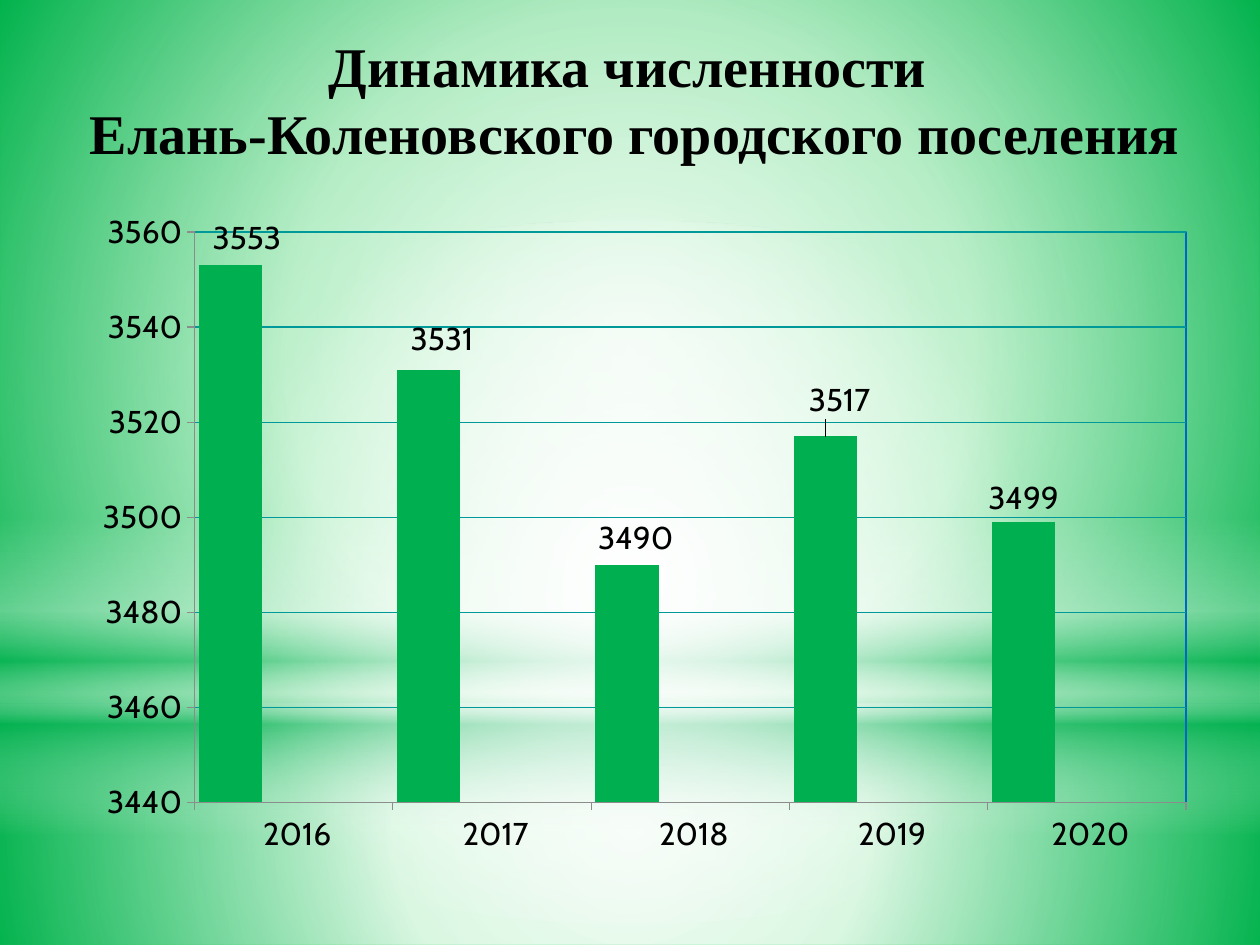
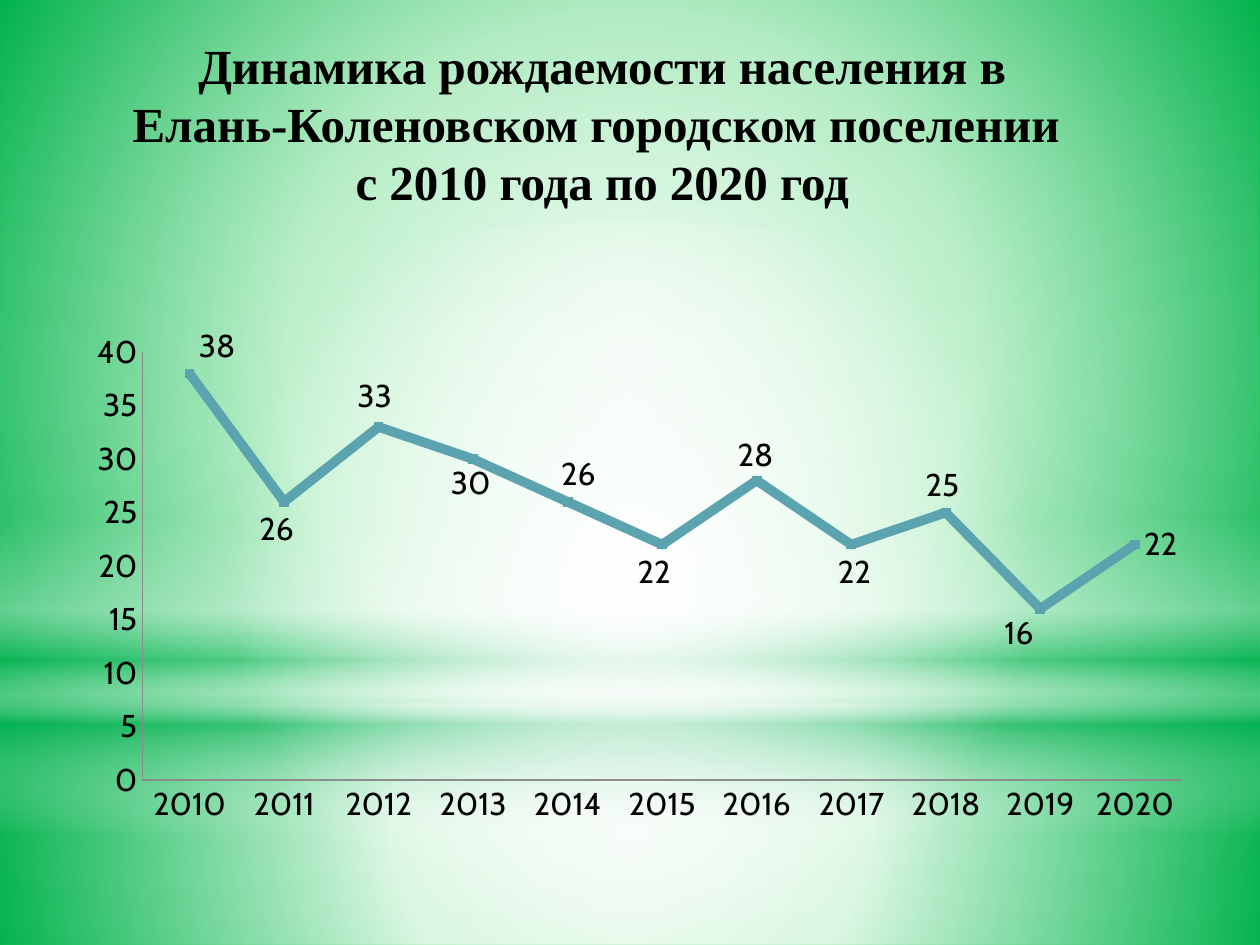
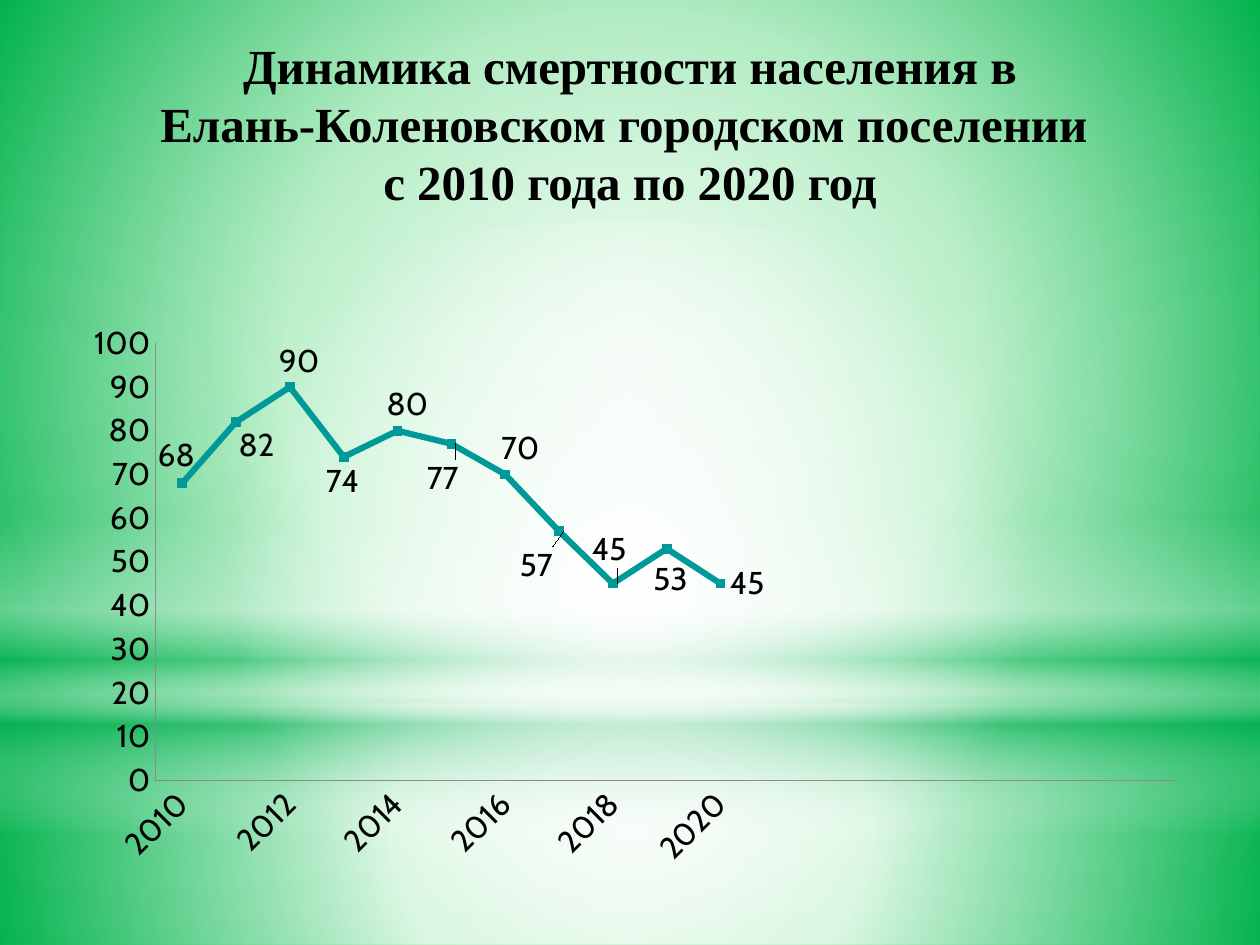
"""Build three population slides with native charts on a shared green master."""
import dataclasses

import pptx
import pptx.chart.data
import pptx.dml.color
import pptx.enum.chart
import pptx.enum.shapes
import pptx.enum.text
import pptx.oxml
import pptx.oxml.ns
import pptx.util

Pt = pptx.util.Pt
RGB = pptx.dml.color.RGBColor.from_string
Chart = pptx.enum.chart
Shape = pptx.enum.shapes.MSO_SHAPE


@dataclasses.dataclass(frozen=True)
class Theme:
    title_font: str = "Times New Roman"
    chart_font: str = "Cabin"
    title_size: int = 28
    large_title_size: int = 32
    chart_size: int = 18
    text: str = "000000"
    green: str = "00B050"
    white: str = "FFFFFF"
    teal: str = "009999"
    steel: str = "5BA3AE"
    axis: str = "8C8C8C"
    frame: str = "0066CC"
    unused: tuple = ("1E5F9F", "7F8FA9")
    background: tuple = ((0, "ACEFBE", 100), (42, "65E086", 100), (100, "05BB3C", 100))


def put_text(tf, text, *, font, size, color, spacing, bold=True):
    p = tf.paragraphs[0]
    p.text = text.replace("\n", "\v")
    p.alignment = pptx.enum.text.PP_ALIGN.CENTER
    p.line_spacing = Pt(spacing)
    for r in p.runs:
        r.font.name, r.font.size, r.font.bold = font, Pt(size), bold
        r.font.color.rgb = RGB(color)


def gradient(stops, focus):
    gs = "".join(
        f'<a:gs pos="{pos * 1000}"><a:srgbClr val="{color}">'
        f'<a:alpha val="{alpha * 1000}"/></a:srgbClr></a:gs>'
        for pos, color, alpha in stops
    )
    if focus:
        l, t, r, b = (n * 1000 for n in focus)
        shade = (f'<a:path path="circle"><a:fillToRect l="{l}" t="{t}" '
                 f'r="{r}" b="{b}"/></a:path>')
    else:
        shade = '<a:lin ang="5400000" scaled="0"/>'
    return pptx.oxml.parse_xml(
        f'<a:gradFill {pptx.oxml.ns.nsdecls("a")} rotWithShape="1">'
        f"<a:gsLst>{gs}</a:gsLst>{shade}</a:gradFill>"
    )


def manual_layout(target="", modes=(), **percents):
    parts = [f'<c:layoutTarget val="{target}"/>'] if target else []
    parts += [f'<c:{m} val="edge"/>' for m in modes]
    parts += [f'<c:{key} val="{n / 100:.3f}"/>' for key, n in percents.items()]
    return pptx.oxml.parse_xml(
        f'<c:layout {pptx.oxml.ns.nsdecls("c")}><c:manualLayout>'
        f'{"".join(parts)}</c:manualLayout></c:layout>'
    )


class Deck:
    def __init__(self, theme):
        self.theme = theme
        self.prs = pptx.Presentation()
        self.prs.slide_width, self.prs.slide_height = Pt(720), Pt(540)
        self.s = None

    def slide(self):
        self.s = self.prs.slides.add_slide(self.prs.slide_layouts[6])
        if len(self.prs.slides) == 1:
            self.backdrop()

    def backdrop(self):
        t, master = self.theme, self.prs.slide_master
        center = (50, 50, 50, 50)
        master.background.fill.solid()
        solid = master.element.xpath(".//p:bgPr/a:solidFill")[0]
        solid.getparent().replace(solid, gradient(t.background, (24, 44, 24, 12)))
        layers = (
            (Shape.RECTANGLE, 401.8, 138.2, center,
             ((0, t.white, 91), (37, t.white, 76), (100, t.green, 79))),
            (Shape.RECTANGLE, 0, 401.8, center,
             ((0, t.white, 89), (48, t.white, 62), (100, t.green, 79))),
            (Shape.RECTANGLE, 296.6, 180, None,
             ((0, t.white, 0), (29, t.white, 30), (45, t.green, 40),
              (55, t.white, 26), (65, t.green, 60), (100, t.white, 0))),
            (Shape.OVAL, 126, 401.8, center,
             ((0, t.white, 100), (56, t.white, 0), (100, t.white, 0))),
        )
        for number, (kind, top, height, focus, stops) in enumerate(layers, 20):
            sp = self.s.shapes.add_shape(kind, 0, Pt(top), Pt(720), Pt(height))
            sp.shadow.inherit = False
            sp.line.fill.background()
            sp.fill.solid()
            solid = sp.element.xpath("./p:spPr/a:solidFill")[0]
            solid.getparent().replace(solid, gradient(stops, focus))
            sp.element.xpath("./p:nvSpPr/p:cNvPr")[0].set("id", str(number))
            master.shapes.element.append(sp.element)

    def title(self, text, box, size, spacing):
        tf = self.s.shapes.add_textbox(*map(Pt, box)).text_frame
        tf.word_wrap = True
        tf.vertical_anchor = pptx.enum.text.MSO_ANCHOR.MIDDLE
        put_text(tf, text, font=self.theme.title_font, size=size,
                 color=self.theme.text, spacing=spacing)

    def chart(self, kind, box, cats, series, plot_box, scale, tick):
        data = pptx.chart.data.CategoryChartData()
        data.categories = cats
        for number, values in enumerate(series, 1):
            data.add_series(f"Series {number}", values)
        chart = self.s.shapes.add_chart(kind, *map(Pt, box), data).chart
        chart.has_legend = chart.has_title = False
        chart.font.name = self.theme.chart_font
        chart.font.size = Pt(self.theme.chart_size)
        chart.font.color.rgb = RGB(self.theme.text)
        chart.plots[0].vary_by_categories = False
        val = chart.value_axis
        val.minimum_scale, val.maximum_scale, val.major_unit = scale
        val.has_major_gridlines = False
        for axis in (chart.category_axis, val):
            axis.major_tick_mark = tick
            axis.minor_tick_mark = Chart.XL_TICK_MARK.NONE
            self.line(axis.format.line, self.theme.axis, 0.75)
        area = chart.element.xpath(".//c:plotArea")[0]
        for layout in area.xpath("./c:layout"):
            area.remove(layout)
        area.insert(0, manual_layout("inner", ("xMode", "yMode"),
                                     **dict(zip("xywh", plot_box))))
        return chart

    def line(self, line, color, width):
        line.color.rgb = RGB(color)
        line.width = Pt(width)

    def labels(self, chart, position, offsets):
        ser = chart.plots[0].series[0]
        ser.data_labels.show_value = True
        ser.data_labels.position = position
        for i in range(len(offsets)):
            ser.points[i].data_label.position = position
        for label, (x, y) in zip(chart.element.xpath(".//c:dLbl"), offsets):
            label.insert(1, manual_layout(x=x, y=y))

    def column_chart(self, box, cats, values, plot_box, scale, offsets):
        t = self.theme
        blank = [None] * len(cats)
        chart = self.chart(Chart.XL_CHART_TYPE.COLUMN_CLUSTERED, box, cats,
                           (values, blank, blank), plot_box, scale,
                           Chart.XL_TICK_MARK.OUTSIDE)
        chart.plots[0].gap_width, chart.plots[0].overlap = 13, 0
        for ser, color in zip(chart.plots[0].series, (t.green, *t.unused)):
            ser.format.fill.solid()
            ser.format.fill.fore_color.rgb = RGB(color)
        chart.category_axis.tick_label_position = Chart.XL_TICK_LABEL_POSITION.LOW
        self.line(chart.value_axis.major_gridlines.format.line, t.teal, 0.75)
        chart.element.xpath(".//c:plotArea")[0].append(pptx.oxml.parse_xml(
            f'<c:spPr {pptx.oxml.ns.nsdecls("c", "a")}><a:noFill/><a:ln w="9525">'
            f'<a:solidFill><a:srgbClr val="{t.frame}"/></a:solidFill></a:ln></c:spPr>'
        ))
        self.labels(chart, Chart.XL_LABEL_POSITION.OUTSIDE_END, offsets)

    def line_chart(self, box, cats, values, plot_box, scale, offsets,
                   color, width, slanted=False):
        chart = self.chart(Chart.XL_CHART_TYPE.LINE_MARKERS_STACKED, box, cats,
                           (values,), plot_box, scale, Chart.XL_TICK_MARK.NONE)
        ser = chart.plots[0].series[0]
        ser.smooth = False
        self.line(ser.format.line, color, width)
        ser.marker.style, ser.marker.size = Chart.XL_MARKER_STYLE.SQUARE, 5
        ser.marker.format.fill.solid()
        ser.marker.format.fill.fore_color.rgb = RGB(color)
        self.line(ser.marker.format.line, color, 0.75)
        self.labels(chart, Chart.XL_LABEL_POSITION.RIGHT, offsets)
        if slanted:
            chart.category_axis.tick_labels.font.size = Pt(self.theme.chart_size)
            axis = chart.element.xpath(".//c:catAx")[0]
            axis.xpath("./c:txPr/a:bodyPr")[0].set("rot", "-2700000")
            axis.xpath("./c:noMultiLvlLbl")[0].addprevious(pptx.oxml.parse_xml(
                f'<c:tickLblSkip {pptx.oxml.ns.nsdecls("c")} val="2"/>'))


def main():
    theme = Theme()
    deck = Deck(theme)
    years = [str(year) for year in range(2010, 2021)]
    period = "\nЕлань-Коленовском городском поселении \nс 2010 года по 2020 год"

    deck.slide()
    deck.title("Динамика численности \nЕлань-Коленовского городского поселения",
               (28, 11.5, 669.6, 90), theme.large_title_size, 38)
    deck.column_chart(
        (46.8, 116.6, 631.4, 399.6), [f" {year}" for year in years[6:]],
        (3553, 3531, 3490, 3517, 3499), (10.2, 4, 89.8, 81.6), (3440, 3560, 20),
        ((1.5, -0.4), (1.2, -1), (0.8, -0.3), (1.3, -1.7)))

    deck.slide()
    deck.title("Динамика рождаемости населения в" + period,
               (-31.7, 16.6, 751.7, 108), theme.title_size, 33.2)
    deck.line_chart(
        (36.7, 133.9, 646.6, 393.8), years,
        (38, 26, 33, 30, 26, 22, 28, 22, 25, 16, 22),
        (6.9, 17.1, 91.9, 62.1), (0, 40, 5),
        ((0, -4), (-3, 4), (-2.7, -4.5), (-2.8, 3.5), (-1.4, -4),
         (-3, 4), (-2.5, -3.6), (-2, 4), (-2.6, -4), (-4, 3.5)),
        theme.steel, 5.5)

    deck.slide()
    deck.title("Динамика смертности населения в" + period,
               (0, 16.6, 720, 108), theme.title_size, 33.2)
    deck.line_chart(
        (39.6, 123.8, 646.6, 393.8), years + [""] * 8,
        (68, 82, 90, 74, 80, 77, 70, 57, 45, 53, 45),
        (7.6, 18.4, 90.4, 63.4), (0, 100, 10),
        ((-3, -4), (-0.6, 3.4), (-1.8, -3.8), (-2.4, 3.6), (-1.8, -3.8),
         (-3, 5), (-1.2, -3.8), (-4.3, 5), (-2.7, -5), (-2, 4.5)),
        theme.teal, 3.5, slanted=True)

    deck.prs.save("out.pptx")


if __name__ == "__main__":
    main()
